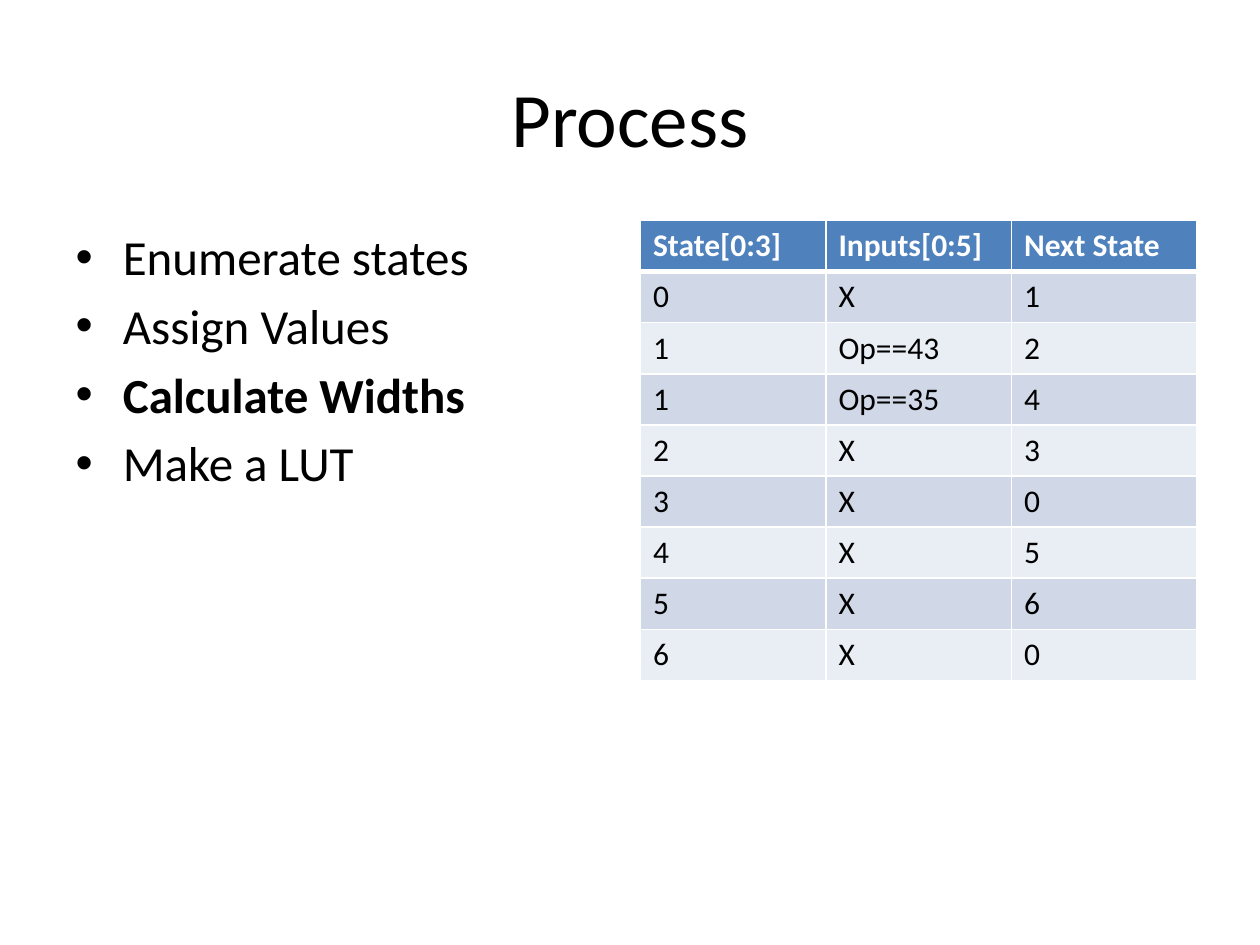
from dataclasses import dataclass

from lxml.etree import SubElement
from pptx import Presentation
from pptx.dml.color import RGBColor
from pptx.enum.text import MSO_ANCHOR, PP_ALIGN
from pptx.oxml.ns import qn
from pptx.util import Emu, Pt

SCALE = 5080  # EMU in one px, 180 px to the inch


@dataclass(frozen=True)
class Theme:
    font: str = "Calibri"
    ink: str = "000000"
    white: str = "FFFFFF"
    head: str = "4F81BD"
    bands: tuple = ("D0D8E8", "E9EDF4")
    title: int = 44
    body: int = 28
    cell: int = 18
    thin: int = 1
    thick: int = 3


THEME = Theme()

STEPS = ["Enumerate states", "Assign Values", "Calculate Widths", "Make a LUT"]
CURRENT = "Calculate Widths"
STATES = [
    ("State[0:3]", "Inputs[0:5]", "Next State"),
    ("0", "X", "1"),
    ("1", "Op==43", "2"),
    ("1", "Op==35", "4"),
    ("2", "X", "3"),
    ("3", "X", "0"),
    ("4", "X", "5"),
    ("5", "X", "6"),
    ("6", "X", "0"),
]


def px(count):
    return Emu(count * SCALE)


def place(shape, box):
    shape.left, shape.top, shape.width, shape.height = map(px, box)


def write(para, text, size, color=THEME.ink, bold=False, align=None):
    run = para.add_run()
    run.text = text
    font = run.font
    font.name, font.size, font.bold = THEME.font, Pt(size), bold
    font.color.rgb = RGBColor.from_string(color)
    para.alignment = align


def edge(cell, side, width):
    props = cell._tc.get_or_add_tcPr()
    line = SubElement(props, qn(f"a:ln{side}"), w=str(Pt(width)))
    fill = SubElement(line, qn("a:solidFill"))
    SubElement(fill, qn("a:srgbClr"), val=THEME.white)


def add_title(slide, box, text):
    title = slide.shapes.title
    place(title, box)
    title.text_frame.vertical_anchor = MSO_ANCHOR.MIDDLE
    write(title.text_frame.paragraphs[0], text, THEME.title,
          align=PP_ALIGN.CENTER)


def add_list(slide, box, items, strong):
    body = slide.placeholders[1]
    place(body, box)
    frame = body.text_frame
    for i, item in enumerate(items):
        para = frame.add_paragraph() if i else frame.paragraphs[0]
        write(para, item, THEME.body, bold=item == strong)


def add_grid(slide, box, rows):
    frame = slide.shapes.add_table(len(rows), len(rows[0]), *map(px, box))
    table = frame.table
    for r, row in enumerate(rows):
        head = r == 0
        color = THEME.head if head else THEME.bands[(r - 1) % 2]
        for c, text in enumerate(row):
            cell = table.cell(r, c)
            # The rule under the header is thick, all others thin
            for side in "LRTB":
                thick = (r, side) in ((0, "B"), (1, "T"))
                edge(cell, side, THEME.thick if thick else THEME.thin)
            cell.fill.solid()
            cell.fill.fore_color.rgb = RGBColor.from_string(color)
            write(cell.text_frame.paragraphs[0], text, THEME.cell,
                  color=THEME.white if head else THEME.ink, bold=head)


def main():
    deck = Presentation()
    deck.slide_width, deck.slide_height = px(1800), px(1350)
    slide = deck.slides.add_slide(deck.slide_layouts[1])

    # Heading
    add_title(slide, (90, 54, 1620, 225), "Process")
    # Steps on the left
    add_list(slide, (90, 315, 795, 891), STEPS, CURRENT)
    # State table on the right
    add_grid(slide, (915, 315, 795, 657), STATES)

    deck.save("out.pptx")


if __name__ == "__main__":
    main()
